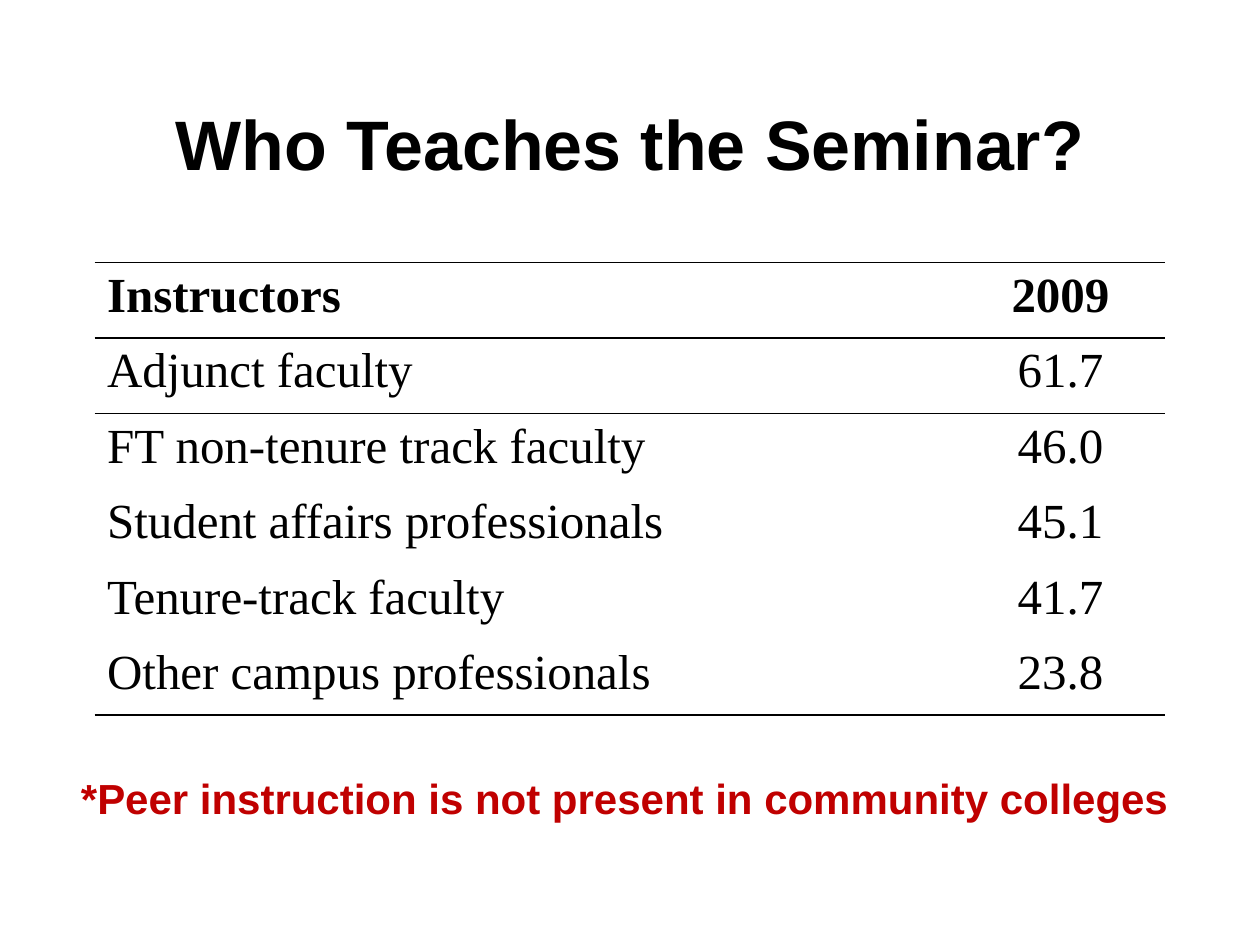
from lxml.etree import SubElement
from pptx import Presentation
from pptx.dml.color import RGBColor
from pptx.enum.text import MSO_ANCHOR, PP_ALIGN
from pptx.oxml.ns import qn
from pptx.util import Pt

INK = {"text": "000000", "note": "C00000", "page": "FFFFFF"}
ROWS = [
    ("Instructors", "2009"),
    ("Adjunct faculty", "61.7"),
    ("FT non-tenure track faculty", "46.0"),
    ("Student affairs professionals", "45.1"),
    ("Tenure-track faculty", "41.7"),
    ("Other campus professionals", "23.8"),
]
RULES = {0, 1, 2, len(ROWS)}


def write(frame, text, size, face, ink, bold, align):
    para = frame.paragraphs[0]
    para.alignment = align
    run = para.add_run()
    run.text = text
    font = run.font
    font.size, font.name, font.bold = Pt(size), face, bold
    font.color.rgb = RGBColor.from_string(INK[ink])


def border(cell, side, shown):
    line = SubElement(cell._tc.get_or_add_tcPr(), qn(f"a:ln{side}"), w=str(Pt(1)))
    if shown:
        fill = SubElement(line, qn("a:solidFill"))
        SubElement(fill, qn("a:srgbClr"), val=INK["text"])
    else:
        SubElement(line, qn("a:noFill"))


deck = Presentation()
deck.slide_width, deck.slide_height = Pt(720), Pt(540)
slide = deck.slides.add_slide(deck.slide_layouts[6])
slide.background.fill.solid()
slide.background.fill.fore_color.rgb = RGBColor.from_string(INK["page"])

for text, size, ink, area in [
    ("Who Teaches the Seminar?", 40, "text", (54, 54, 612, 90)),
    ("*Peer instruction is not present in community colleges", 24, "note", (18, 438, 678, 36)),
]:
    frame = slide.shapes.add_textbox(*map(Pt, area)).text_frame
    frame.word_wrap = True
    frame.vertical_anchor = MSO_ANCHOR.TOP
    write(frame, text, size, "Arial", ink, True, PP_ALIGN.CENTER)

table = slide.shapes.add_table(len(ROWS), 2, Pt(54), Pt(150), Pt(612), Pt(258.6)).table
table.first_row = table.horz_banding = False
for col, width in zip(table.columns, (492, 120)):
    col.width = Pt(width)

for r, row in enumerate(ROWS):
    table.rows[r].height = Pt(43.1)
    for c, text in enumerate(row):
        cell = table.cell(r, c)
        for side, shown in [("L", False), ("R", False), ("T", r in RULES), ("B", r + 1 in RULES)]:
            border(cell, side, shown)
        cell.fill.background()
        align = PP_ALIGN.CENTER if c else PP_ALIGN.LEFT
        write(cell.text_frame, text, 28, "Times New Roman", "text", r == 0, align)

deck.save("out.pptx")
